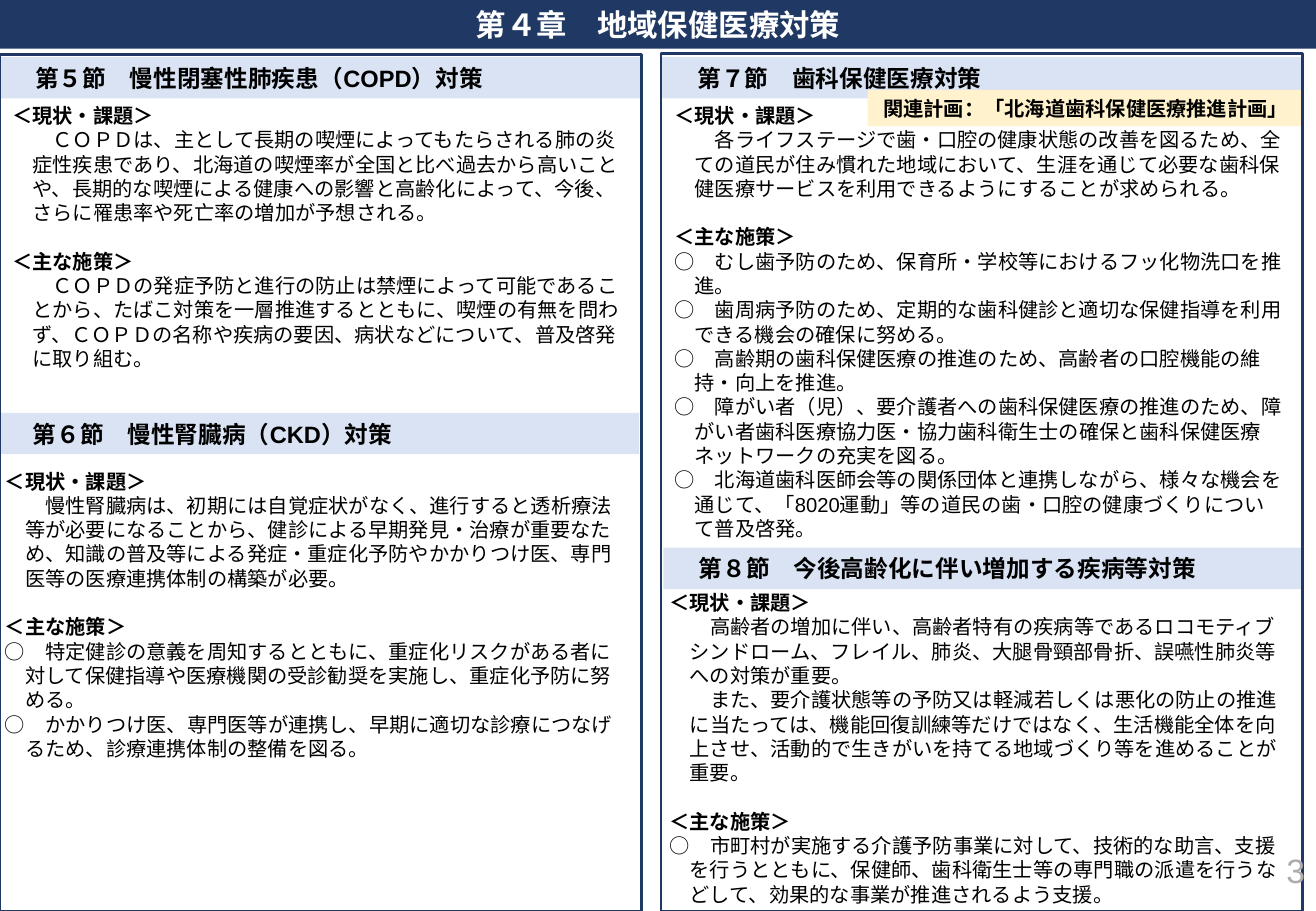
from dataclasses import dataclass
from itertools import groupby

from pptx import Presentation
from pptx.dml.color import RGBColor
from pptx.enum.shapes import MSO_SHAPE as Shape
from pptx.enum.text import MSO_ANCHOR as Anchor, MSO_AUTO_SIZE as AutoSize, PP_ALIGN as Align
from pptx.util import Inches, Pt


@dataclass(frozen=True)
class Theme:
    navy: str = "203864"
    band: str = "DAE3F3"
    tag: str = "FFF2CC"
    black: str = "000000"
    white: str = "FFFFFF"
    grey: str = "AFABAB"
    heading_font: str = "Calibri"
    body_font: str = "Arial"
    title_size: int = 18
    section_size: int = 14
    body_size: int = 12
    number_size: int = 20
    line_pitch: float = 14.4


@dataclass(frozen=True)
class Box:
    left: float
    top: float
    width: float
    height: float

    def lengths(self) -> tuple:
        return tuple(Inches(v) for v in (self.left, self.top, self.width, self.height))


@dataclass(frozen=True)
class Section:
    title: str
    band: Box
    body: Box
    issues: list[str]
    measures: list[str]


THEME = Theme()
BULLET = "○"
COLUMN_WIDTH = 5.28
FRAMES = [Box(0, 0.45, COLUMN_WIDTH, 7.05), Box(5.44, 0.44, COLUMN_WIDTH, 7.06)]

# A line feed inside an item is a line break within its paragraph.
SECTIONS = [
    Section(
        "第５節　慢性閉塞性肺疾患（COPD）対策",
        Box(0, 0.47, COLUMN_WIDTH, 0.34), Box(0, 0.8, COLUMN_WIDTH, 2.32),
        ["ＣＯＰＤは、主として長期の喫煙によってもたらされる肺の炎\n"
         "症性疾患であり、北海道の喫煙率が全国と比べ過去から高いこと\n"
         "や、長期的な喫煙による健康への影響と高齢化によって、今後、\n"
         "さらに罹患率や死亡率の増加が予想される。"],
        ["ＣＯＰＤの発症予防と進行の防止は禁煙によって可能であるこ\n"
         "とから、たばこ対策を一層推進するとともに、喫煙の有無を問わ\n"
         "ず、ＣＯＰＤの名称や疾病の要因、病状などについて、普及啓発\n"
         "に取り組む。"]),
    Section(
        "第６節　慢性腎臓病（CKD）対策",
        Box(-0.02, 3.4, COLUMN_WIDTH, 0.34), Box(-0.06, 3.81, COLUMN_WIDTH, 2.52),
        ["慢性腎臓病は、初期には自覚症状がなく、進行すると透析療法\n"
         "等が必要になることから、健診による早期発見・治療が重要なた\n"
         "め、知識の普及等による発症・重症化予防やかかりつけ医、専門\n"
         "医等の医療連携体制の構築が必要。"],
        ["○　特定健診の意義を周知するとともに、重症化リスクがある者に\n"
         "対して保健指導や医療機関の受診勧奨を実施し、重症化予防に努\n"
         "める。",
         "○　かかりつけ医、専門医等が連携し、早期に適切な診療につなげ\n"
         "るため、診療連携体制の整備を図る。"]),
    Section(
        "第７節　歯科保健医療対策",
        Box(5.45, 0.47, 5.27, 0.34), Box(5.45, 0.8, 5.23, 3.74),
        ["各ライフステージで歯・口腔の健康状態の改善を図るため、全\n"
         "ての道民が住み慣れた地域において、生涯を通じて必要な歯科保\n"
         "健医療サービスを利用できるようにすることが求められる。"],
        ["○　むし歯予防のため、保育所・学校等におけるフッ化物洗口を推\n進。",
         "○　歯周病予防のため、定期的な歯科健診と適切な保健指導を利用\n"
         "できる機会の確保に努める。",
         "○　高齢期の歯科保健医療の推進のため、高齢者の口腔機能の維\n"
         "持・向上を推進。",
         "○　障がい者（児）、要介護者への歯科保健医療の推進のため、障\n"
         "がい者歯科医療協力医・協力歯科衛生士の確保と歯科保健医療\n"
         "ネットワークの充実を図る。",
         "○　北海道歯科医師会等の関係団体と連携しながら、様々な機会を\n"
         "通じて、「8020運動」等の道民の歯・口腔の健康づくりについ\n"
         "て普及啓発。"]),
    Section(
        "第８節　今後高齢化に伴い増加する疾病等対策",
        Box(5.46, 4.51, 5.25, 0.34), Box(5.41, 4.81, COLUMN_WIDTH, 2.73),
        ["高齢者の増加に伴い、高齢者特有の疾病等であるロコモティブ\n"
         "シンドローム、フレイル、肺炎、大腿骨頸部骨折、誤嚥性肺炎等\n"
         "への対策が重要。",
         "また、要介護状態等の予防又は軽減若しくは悪化の防止の推進\n"
         "に当たっては、機能回復訓練等だけではなく、生活機能全体を向\n"
         "上させ、活動的で生きがいを持てる地域づくり等を進めることが\n"
         "重要。"],
        ["○　市町村が実施する介護予防事業に対して、技術的な助言、支援\n"
         "を行うとともに、保健師、歯科衛生士等の専門職の派遣を行うな\n"
         "どして、効果的な事業が推進されるよう支援。"]),
]


def place(shape, box: Box) -> None:
    shape.left, shape.top, shape.width, shape.height = box.lengths()


def set_frame(shape, anchor=Anchor.MIDDLE, left: float = 0.1):
    """Fix the insets, wrapping and anchor of a shape's text and return its frame."""
    frame = shape.text_frame
    frame.auto_size = AutoSize.NONE
    frame.word_wrap = True
    frame.vertical_anchor = anchor
    frame.margin_left, frame.margin_right = Inches(left), Inches(0.1)
    frame.margin_top = frame.margin_bottom = Inches(0.05)
    return frame


def write(para, text: str, *, size: int = THEME.body_size, color: str = THEME.black,
          font: str = THEME.heading_font, bold: bool = False, align=Align.LEFT,
          before: float = 0, margin: int = 0, indent: int = 0) -> None:
    """Write one paragraph; Latin letters and digits take the body font."""
    para.alignment = align
    para.line_spacing = 1.0
    para.space_before, para.space_after = Pt(before), Pt(0)
    properties = para._p.get_or_add_pPr()
    properties.set("marL", str(Pt(margin)))
    properties.set("indent", str(Pt(indent)))
    if properties.find("{*}buNone") is None:
        properties.append(properties.makeelement(
            "{http://schemas.openxmlformats.org/drawingml/2006/main}buNone", {}))
    for number, line in enumerate(text.split("\n")):
        if number:
            para.add_line_break()
        for latin, letters in groupby(line, str.isascii):
            span = para.add_run()
            span.text = "".join(letters)
            span.font.name = THEME.body_font if latin else font
            span.font.size, span.font.bold = Pt(size), bold
            span.font.color.rgb = RGBColor.from_string(color)


def add_box(page, box: Box, fill: str = "", line: str = ""):
    shape = page.shapes.add_shape(Shape.RECTANGLE, *box.lengths())
    shape.shadow.inherit = False
    if fill:
        shape.fill.solid()
        shape.fill.fore_color.rgb = RGBColor.from_string(fill)
    else:
        shape.fill.background()
    if line:
        shape.line.color.rgb = RGBColor.from_string(line)
        shape.line.width = Pt(1.5)
    else:
        shape.line.fill.background()
    return shape


def fill_body(holder, section: Section) -> None:
    place(holder, section.body)
    frame = set_frame(holder, Anchor.TOP)
    em = THEME.body_size
    para = frame.paragraphs[0]
    write(para, "＜現状・課題＞", bold=True)
    for item in section.issues:
        write(frame.add_paragraph(), item, font=THEME.body_font, margin=em, indent=em)
    write(frame.add_paragraph(), "＜主な施策＞", bold=True, before=THEME.line_pitch)
    for item in section.measures:
        indent = -em if item.startswith(BULLET) else em
        write(frame.add_paragraph(), item, font=THEME.body_font, margin=em, indent=indent)


def main() -> None:
    deck = Presentation()
    deck.slide_width, deck.slide_height = Inches(10.83), Inches(7.5)
    page = deck.slides.add_slide(deck.slide_layouts.get_by_name("Comparison"))

    title, *bodies = page.placeholders
    place(title, Box(0, 0, 10.83, 0.4))
    title.fill.solid()
    title.fill.fore_color.rgb = RGBColor.from_string(THEME.navy)
    write(set_frame(title).paragraphs[0], "第４章　地域保健医療対策",
          size=THEME.title_size, color=THEME.white, bold=True, align=Align.CENTER)

    for holder, section in zip(bodies, SECTIONS):
        fill_body(holder, section)
        band = add_box(page, section.band, fill=THEME.band)
        write(set_frame(band, left=0.29).paragraphs[0], section.title,
              size=THEME.section_size, bold=True)

    tag = add_box(page, Box(7.14, 0.74, 3.59, 0.3), fill=THEME.tag)
    write(set_frame(tag).paragraphs[0], "関連計画：「北海道歯科保健医療推進計画」",
          bold=True, align=Align.CENTER)

    for frame in FRAMES:
        add_box(page, frame, line=THEME.navy)

    number = page.shapes.add_textbox(*Box(8.4, 6.96, 2.44, 0.4).lengths())
    write(set_frame(number).paragraphs[0], "3", size=THEME.number_size,
          color=THEME.grey, align=Align.RIGHT)

    deck.save("out.pptx")


if __name__ == "__main__":
    main()
